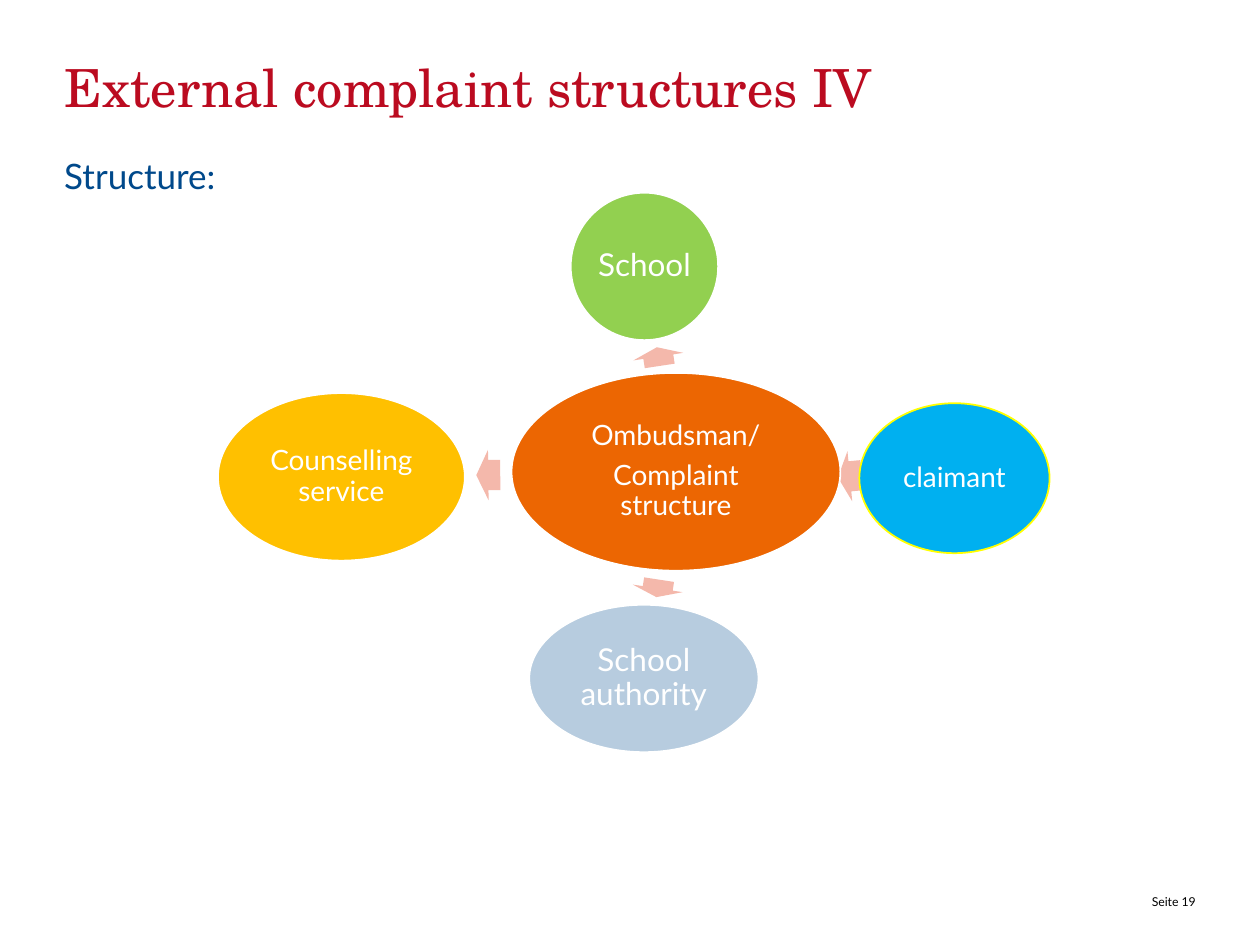
from pptx import Presentation
from pptx.dml.color import RGBColor
from pptx.enum.shapes import MSO_SHAPE as SHAPE
from pptx.enum.text import MSO_ANCHOR as ANCHOR, MSO_AUTO_SIZE as AUTO, PP_ALIGN as ALIGN
from pptx.util import Emu, Pt

PX = 9144  # 100 px to the inch
SANS, SERIF = "Lato", "TeX Gyre Schola"
WHITE, ARROW = "FFFFFF", "F4B8AB"

# text, left, top, width, height, fill, line, size, inset
NODES = [
    (["Ombudsman/", "Complaint structure"], 233, 143, 261, 157, "EC6602", WHITE, 16, 2),
    (["School"], 280, 0, 117, 117, "92D050", WHITE, 18, 3),
    (["claimant"], 509, 167, 151, 119, "00B0F0", "FFFF00", 16, 2),
    (["School authority"], 247, 327, 182, 117, "B7CCDF", WHITE, 18, 3),
    (["Counselling service"], 0, 159, 196, 133, "FFC000", WHITE, 16, 2),
]
# left, top, width, height, rotation
ARROWS = [
    (342, 110, 15, 40, 261.4),
    (492, 205, 19, 40, 174.6),
    (342, 294, 14, 40, 98.6),
    (205, 204, 19, 40, 179.3),
]


def px(*lengths):
    return [Emu(n * PX) for n in lengths]


def color(hex_code):
    return RGBColor.from_string(hex_code)


def set_text(sp, lines, size, hex_code, font=SANS, align=ALIGN.LEFT,
             anchor=ANCHOR.TOP, inset=0, inset_top=None):
    tf = sp.text_frame
    tf.word_wrap = True
    tf.auto_size = AUTO.NONE
    tf.vertical_anchor = anchor
    tf.margin_left, tf.margin_right, tf.margin_bottom = px(inset, inset, inset)
    tf.margin_top = px(inset if inset_top is None else inset_top)[0]
    for i, line in enumerate(lines):
        p = tf.paragraphs[0] if i == 0 else tf.add_paragraph()
        p.alignment = align
        r = p.add_run()
        r.text = line
        r.font.name, r.font.size = font, Pt(size)
        r.font.color.rgb = color(hex_code)
    return tf.paragraphs


def add_text(slide, box, lines, size, hex_code, **style):
    sp = slide.shapes.add_textbox(*px(*box))
    set_text(sp, lines, size, hex_code, **style)


def add_title(slide, box, text):
    sp = slide.shapes.title
    sp.left, sp.top, sp.width, sp.height = px(*box)
    set_text(sp, [text], 30, "BB0B20", font=SERIF)


def add_filled(slide, kind, box, fill):
    sp = slide.shapes.add_shape(kind, *px(*box))
    sp.shadow.inherit = False
    sp.fill.solid()
    sp.fill.fore_color.rgb = color(fill)
    return sp


def add_node(slide, box, lines, fill, line, size, inset):
    sp = add_filled(slide, SHAPE.OVAL, box, fill)
    sp.line.color.rgb = color(line)
    sp.line.width = Pt(1)
    for p in set_text(sp, lines, size, WHITE, align=ALIGN.CENTER,
                      anchor=ANCHOR.MIDDLE, inset=inset):
        p.line_spacing = 0.9
        p.space_after = Pt(0.35 * size)


def add_arrow(slide, box, rotation):
    sp = add_filled(slide, SHAPE.RIGHT_ARROW, box, ARROW)
    sp.line.fill.background()
    sp.adjustments[0], sp.adjustments[1] = 0.6, 0.5
    sp.rotation = rotation


def add_diagram(slide, left, top):
    # Arrows lie behind the ellipses
    for x, y, w, h, rotation in ARROWS:
        add_arrow(slide, (left + x, top + y, w, h), rotation)
    for lines, x, y, w, h, *style in NODES:
        add_node(slide, (left + x, top + y, w, h), lines, *style)


def main():
    prs = Presentation()
    prs.slide_width, prs.slide_height = px(1000, 750)
    slide = prs.slides.add_slide(prs.slide_layouts[5])

    # Heading and lead-in
    add_title(slide, (51, 44, 898, 63), "External complaint structures IV")
    add_text(slide, (51, 123, 898, 512), ["Structure:"], 20, "00498B")

    # Complaint structure and its partners
    add_diagram(slide, 173, 153)

    # Page number
    add_text(slide, (848, 706, 101, 16), ["Seite 19"], 7, "000000",
             align=ALIGN.RIGHT, inset_top=4)
    prs.save("out.pptx")


if __name__ == "__main__":
    main()
